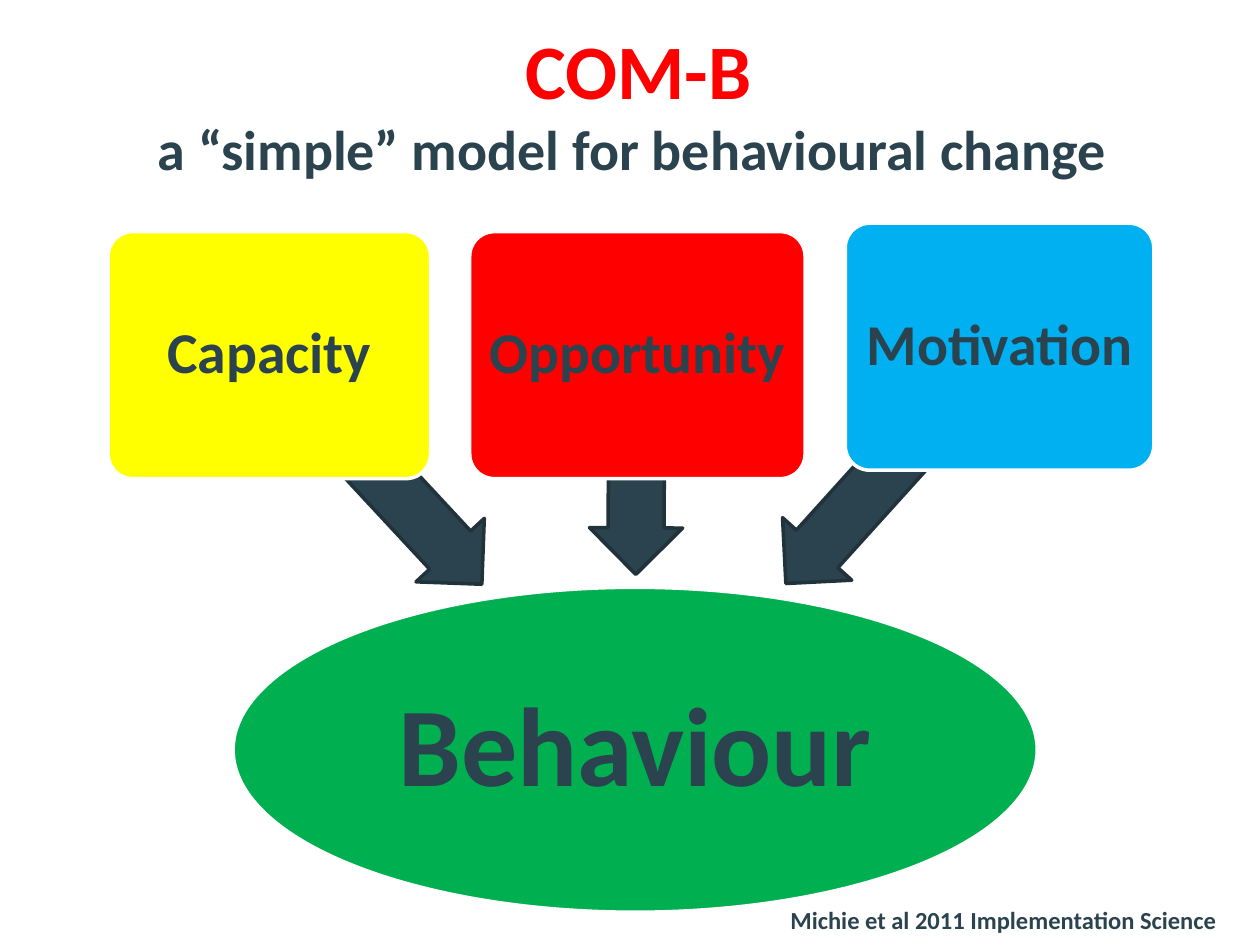
from pptx import Presentation
from pptx.dml.color import RGBColor
from pptx.enum.shapes import MSO_SHAPE as Shape
from pptx.enum.text import MSO_ANCHOR as Anchor, PP_ALIGN as Align
from pptx.util import Cm, Pt

SLATE = RGBColor(0x2B, 0x43, 0x4E)
DARK_SLATE = RGBColor(0x20, 0x32, 0x3A)
WHITE = RGBColor(0xFF, 0xFF, 0xFF)
YELLOW = RGBColor(0xFF, 0xFF, 0x00)
RED = RGBColor(0xFF, 0x00, 0x00)
BLUE = RGBColor(0x00, 0xB0, 0xF0)
GREEN = RGBColor(0x00, 0xB0, 0x50)

BOX_HEIGHT = 4.98
ARROW_HEIGHT = 1.88

COMPONENTS = [
    ("Capacity", YELLOW, (2.18, 4.67, 6.5), (4.42, 8.53, 6.3), 227.1),
    ("Opportunity", RED, (9.47, 4.67, 6.76), (10.62, 8.43, 4.42), 270.3),
    ("Motivation", BLUE, (17.04, 4.5, 6.22), (14.78, 8.43, 6.45), 312.1),
]


def format_paragraph(paragraph, size, color, align):
    paragraph.alignment = align
    for run in paragraph.runs:
        run.font.name = "Calibri"
        run.font.size = Pt(size)
        run.font.bold = True
        run.font.color.rgb = color


def add_figure(slide, kind, place, fill, outline):
    figure = slide.shapes.add_shape(kind, *map(Cm, place))
    figure.shadow.inherit = False
    figure.fill.solid()
    figure.fill.fore_color.rgb = fill
    figure.line.color.rgb = outline
    figure.line.width = Pt(2)
    return figure


def add_label(figure, text, size, margin):
    frame = figure.text_frame
    frame.text = text
    frame.word_wrap = True
    frame.vertical_anchor = Anchor.MIDDLE
    frame.margin_left = frame.margin_right = Cm(margin)
    frame.margin_top = frame.margin_bottom = Cm(margin)
    label = frame.paragraphs[0]
    label.line_spacing = 0.9
    format_paragraph(label, size, SLATE, Align.CENTER)


def add_arrow(slide, place, rotation):
    arrow = add_figure(slide, Shape.LEFT_ARROW, (*place, ARROW_HEIGHT), SLATE, DARK_SLATE)
    arrow.adjustments[0] = 0.6
    arrow.adjustments[1] = 0.5
    arrow.rotation = rotation


def add_component(slide, name, fill, place):
    box = add_figure(slide, Shape.ROUNDED_RECTANGLE, (*place, BOX_HEIGHT), fill, WHITE)
    box.adjustments[0] = 0.1
    add_label(box, name, 33, 0.17)


def add_text(slide, place, lines, align):
    frame = slide.shapes.add_textbox(*map(Cm, place)).text_frame
    frame.word_wrap = True
    frame.text = "\n".join(text for text, _, _ in lines)
    for paragraph, (_, size, color) in zip(frame.paragraphs, lines):
        format_paragraph(paragraph, size, color, align)


def main():
    deck = Presentation()
    deck.slide_width, deck.slide_height = Cm(25.4), Cm(19.05)
    slide = deck.slides.add_slide(deck.slide_layouts[6])

    behaviour = add_figure(slide, Shape.OVAL, (4.7, 11.84, 16.21, 6.55), GREEN, WHITE)
    add_label(behaviour, "Behaviour", 64, 0.1)

    for name, fill, box_place, arrow_place, rotation in COMPONENTS:
        add_arrow(slide, arrow_place, rotation)
        add_component(slide, name, fill, box_place)

    citation = [("Michie et al 2011 Implementation Science ", 14, SLATE)]
    add_text(slide, (11.1, 18.11, 13.79, 0.86), citation, Align.RIGHT)

    title = [
        ("COM-B", 44, RED),
        ("a “simple” model for behavioural change ", 32, SLATE),
    ]
    add_text(slide, (1.57, 0.33, 22.61, 3.51), title, Align.CENTER)

    deck.save("out.pptx")


if __name__ == "__main__":
    main()
